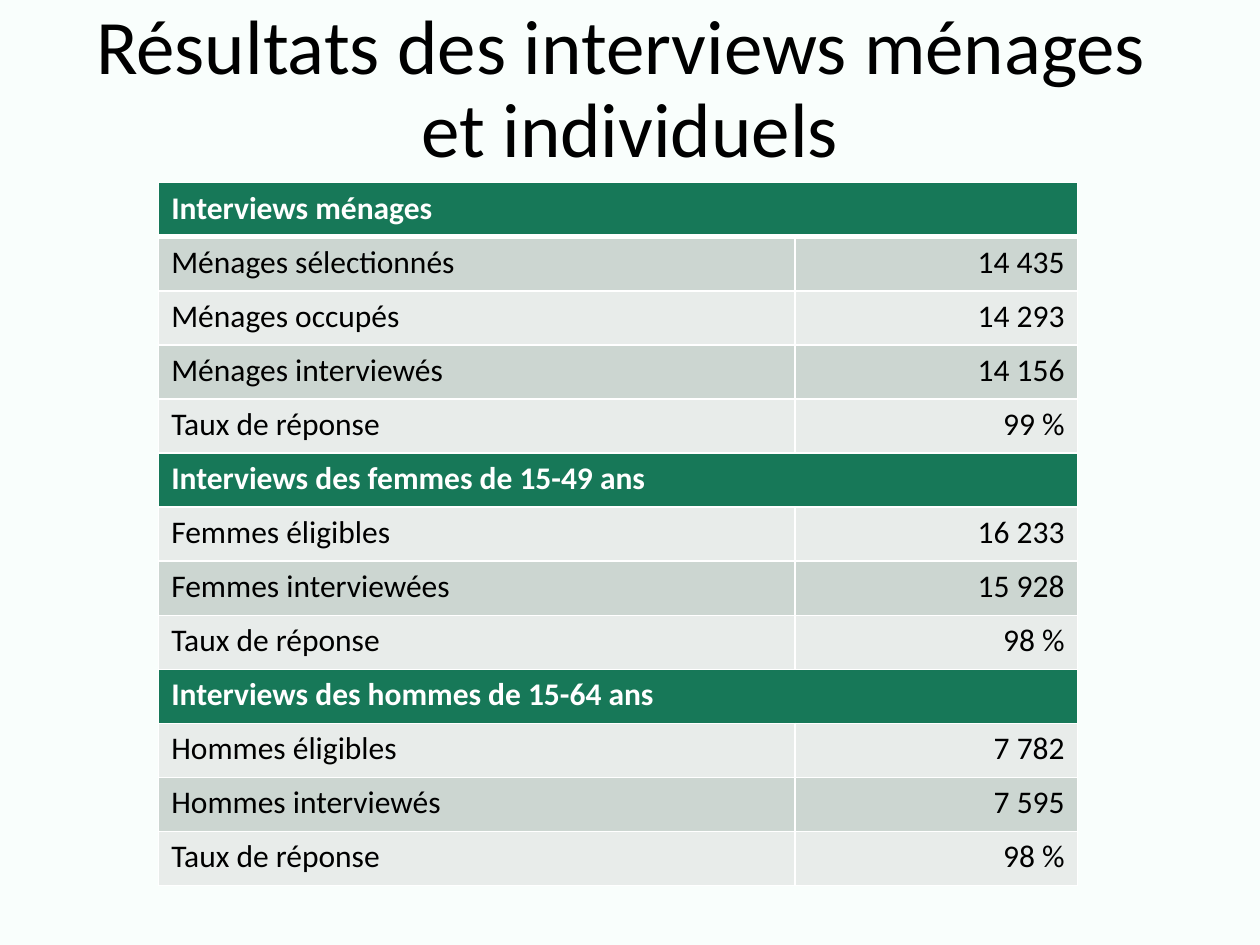
from pptx import Presentation
from pptx.dml.color import RGBColor
from pptx.enum.text import MSO_ANCHOR, PP_ALIGN
from pptx.oxml.ns import qn
from pptx.util import Inches, Pt
from lxml.etree import SubElement

FONT = "Calibri"
COLORS = {
    "background": "F9FEFC",
    "text": "000000",
    "white": "FFFFFF",
    "header": "177858",
    "dark_band": "CCD6D1",
    "light_band": "E8ECEA",
}
SECTIONS = {
    "Interviews ménages": [
        ("Ménages sélectionnés", "14 435"),
        ("Ménages occupés", "14 293"),
        ("Ménages interviewés", "14 156"),
        ("Taux de réponse", "99 %"),
    ],
    "Interviews des femmes de 15-49 ans": [
        ("Femmes éligibles", "16 233"),
        ("Femmes interviewées", "15 928"),
        ("Taux de réponse", "98 %"),
    ],
    "Interviews des hommes de 15-64 ans": [
        ("Hommes éligibles", "7 782"),
        ("Hommes interviewés", "7 595"),
        ("Taux de réponse", "98 %"),
    ],
}
COLUMN_WIDTHS = (5.05, 2.24)
TABLE_HEIGHT = 5.58


def rgb(name):
    return RGBColor.from_string(COLORS[name])


def write_text(para, text, size=18, color="text", bold=False, align=PP_ALIGN.LEFT):
    para.alignment = align
    for number, line in enumerate(text.split("\n")):
        if number:
            para.add_line_break()
        span = para.add_run()
        span.text = line
        span.font.name = FONT
        span.font.size = Pt(size)
        span.font.bold = bold
        span.font.color.rgb = rgb(color)


def set_borders(cell, bottom=1):
    properties = cell._tc.get_or_add_tcPr()
    for side, width in (("L", 1), ("R", 1), ("T", 1), ("B", bottom)):
        line = SubElement(properties, qn(f"a:ln{side}"), w=str(Pt(width)))
        fill = SubElement(line, qn("a:solidFill"))
        SubElement(fill, qn("a:srgbClr"), val=COLORS["white"])


def format_cell(cell, text, fill, bottom=1, **text_format):
    set_borders(cell, bottom)
    cell.fill.solid()
    cell.fill.fore_color.rgb = rgb(fill)
    write_text(cell.text_frame.paragraphs[0], text, **text_format)


def add_title(page, text):
    box = page.shapes.title
    box.left, box.top = Inches(0), Inches(0)
    box.width, box.height = Inches(10), Inches(1.45)
    box.text_frame.vertical_anchor = MSO_ANCHOR.MIDDLE
    para = box.text_frame.paragraphs[0]
    para.line_spacing = 0.9
    write_text(para, text, size=44, align=PP_ALIGN.CENTER)


def add_header_row(table, index, text):
    bottom = 3 if index == 0 else 1
    first, last = table.cell(index, 0), table.cell(index, 1)
    first.merge(last)
    set_borders(last, bottom)
    format_cell(first, text, "header", bottom, color="white", bold=True)


def add_value_row(table, index, label, value):
    band = "dark_band" if index % 2 else "light_band"
    format_cell(table.cell(index, 0), label, band)
    format_cell(table.cell(index, 1), value, band, align=PP_ALIGN.RIGHT)


def add_results_table(page):
    row_count = sum(1 + len(rows) for rows in SECTIONS.values())
    table = page.shapes.add_table(
        row_count, len(COLUMN_WIDTHS), Inches(1.26), Inches(1.45),
        Inches(sum(COLUMN_WIDTHS)), Inches(TABLE_HEIGHT),
    ).table
    table.first_row = table.horz_banding = False
    for column, width in zip(table.columns, COLUMN_WIDTHS):
        column.width = Inches(width)

    # Each section is a merged heading followed by its figures
    index = 0
    for heading, rows in SECTIONS.items():
        add_header_row(table, index, heading)
        for index, (label, value) in enumerate(rows, index + 1):
            add_value_row(table, index, label, value)
        index += 1


def main():
    deck = Presentation()
    deck.slide_width, deck.slide_height = Inches(10), Inches(7.5)
    page = deck.slides.add_slide(deck.slide_layouts[5])

    # Background
    page.background.fill.solid()
    page.background.fill.fore_color.rgb = rgb("background")

    # Content
    add_title(page, "Résultats des interviews ménages \net individuels")
    add_results_table(page)
    deck.save("out.pptx")


if __name__ == "__main__":
    main()
